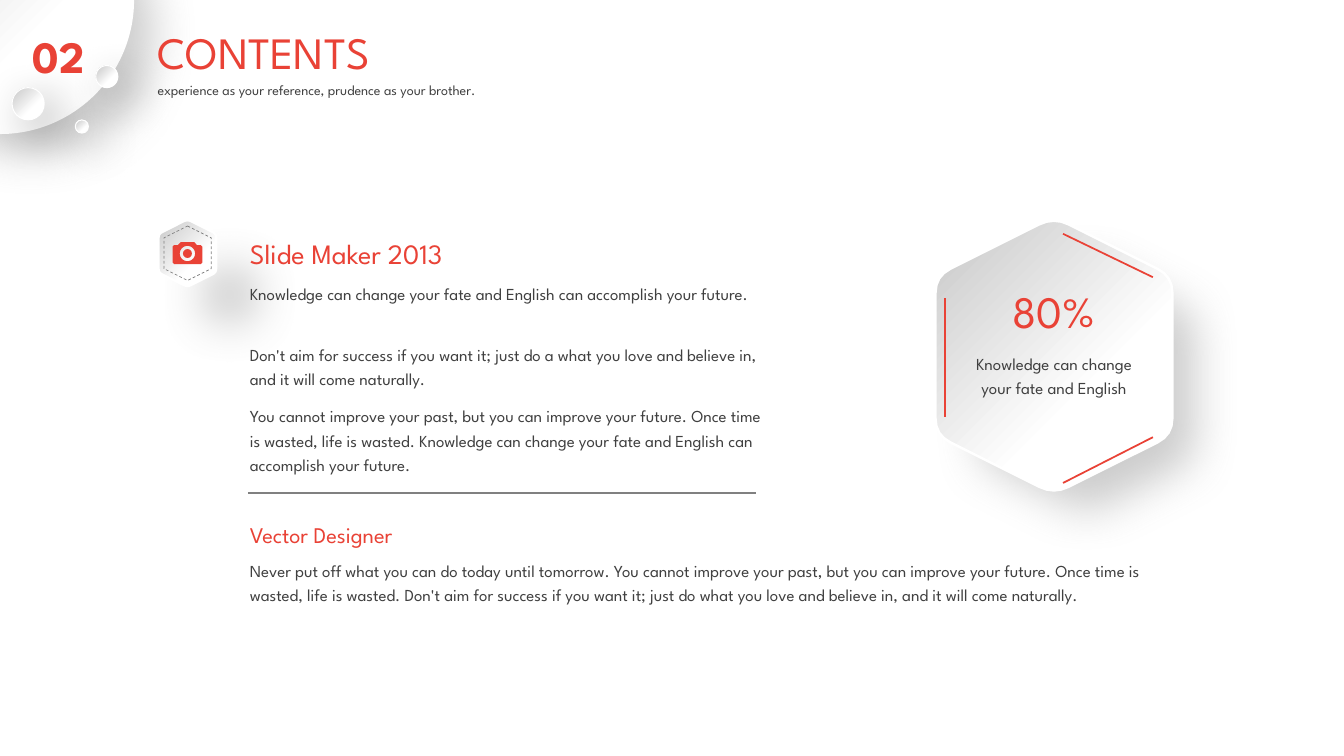
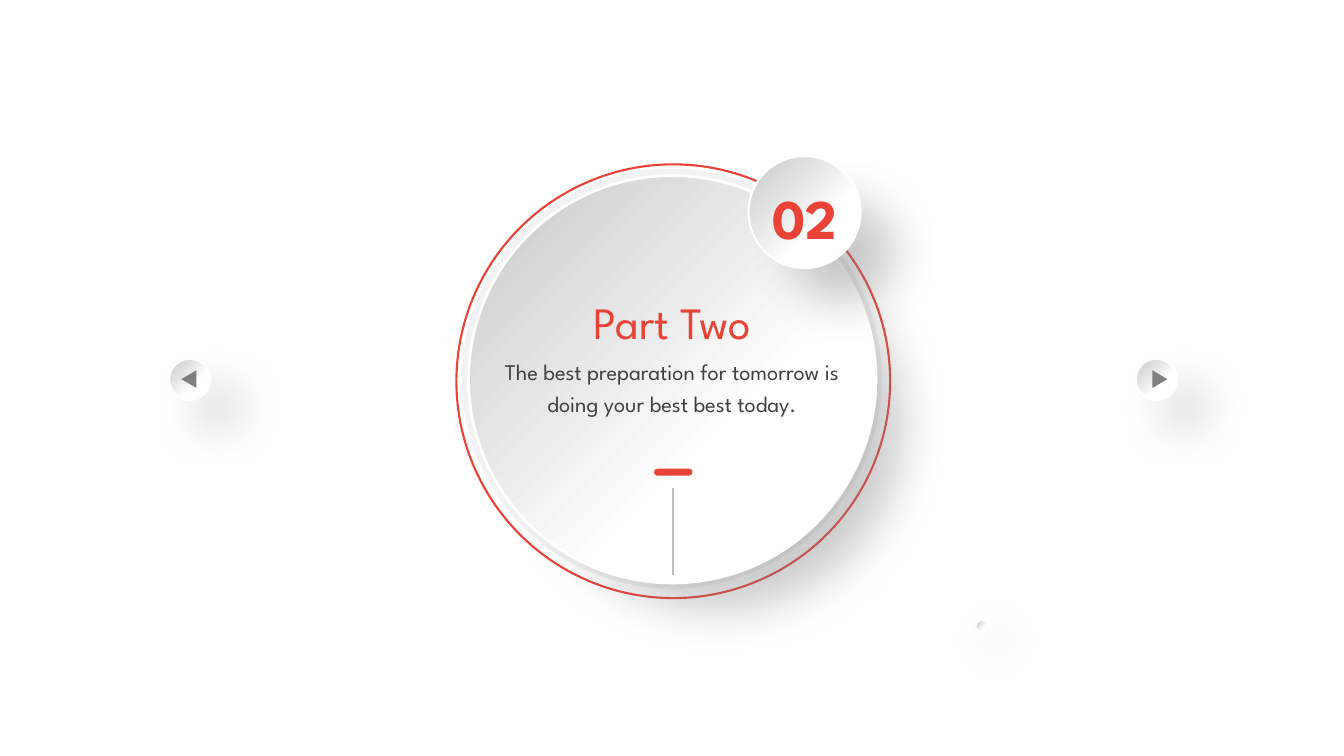
"""Build a contents slide and a section slide with soft embossed shapes."""
import math

from lxml import etree
from pptx import Presentation
from pptx.dml.color import RGBColor
from pptx.enum import dml, shapes, text
from pptx.oxml import ns
from pptx.util import Pt

FONT = "League Spartan"
RED, INK, GREY, WHITE = "E94236", "404040", "808080", "FFFFFF"
SHEEN = ((0, WHITE), (36, WHITE), (100, "C7C7C7"))
OVAL = shapes.MSO_SHAPE.OVAL
LEFT, CENTER = text.PP_ALIGN.LEFT, text.PP_ALIGN.CENTER


def rgb(value):
    """Turn a hex string into a colour."""
    return RGBColor.from_string(value)


def add_child(parent, tag, **attributes):
    """Append a DrawingML element."""
    values = {key: str(value) for key, value in attributes.items()}
    return etree.SubElement(parent, ns.qn(f"a:{tag}"), values)


def style(shape, fill=None, line=None, width=1, dash=None):
    """Give a shape a flat fill and outline, or none."""
    shape.shadow.inherit = False
    if fill:
        shape.fill.solid()
        shape.fill.fore_color.rgb = rgb(fill)
    else:
        shape.fill.background()
    if line:
        shape.line.color.rgb = rgb(line)
        shape.line.width = Pt(width)
        shape.line.dash_style = dash
    else:
        shape.line.fill.background()
    return shape


def emboss(shape, width=1.5, distance=45, shade=GREY, opacity=40):
    """Give a shape the shared sheen, white rim and soft shadow."""
    style(shape, WHITE, WHITE, width)
    shape.fill.gradient()
    shape.fill.gradient_angle = 135
    stops = shape._element.spPr.find(".//" + ns.qn("a:gsLst"))
    for stop in list(stops):
        stops.remove(stop)
    for position, colour in SHEEN:
        stop = add_child(stops, "gs", pos=position * 1000)
        add_child(stop, "srgbClr", val=colour)
    effects = shape._element.spPr.find(ns.qn("a:effectLst"))
    shadow = add_child(effects, "outerShdw", blurRad=Pt(33), dist=Pt(distance),
                       dir=45 * 60000, sx=90000, sy=90000, algn="tl",
                       rotWithShape=0)
    tint = add_child(shadow, "srgbClr", val=shade)
    add_child(tint, "alpha", val=opacity * 1000)


def add_preset(canvas, preset, left, top, width, height, rotation=0):
    """Add a preset shape."""
    shape = canvas.add_shape(preset, Pt(left), Pt(top), Pt(width), Pt(height))
    shape.rotation = rotation
    return shape


def add_circle(canvas, left, top, size):
    """Add a circle by its top left corner."""
    return add_preset(canvas, OVAL, left, top, size, size)


def add_bubble(canvas, left, top, size):
    """Add a small embossed circle."""
    emboss(add_circle(canvas, left, top, size), 0.75, 15, "000000", 45)


def add_label(canvas, box, wording, size, colour=INK, align=LEFT,
              bold=None, spacing=None, wrap=True):
    """Add a one paragraph text box."""
    frame = canvas.add_textbox(*map(Pt, box)).text_frame
    frame.word_wrap = wrap
    frame.auto_size = text.MSO_AUTO_SIZE.SHAPE_TO_FIT_TEXT
    paragraph = frame.paragraphs[0]
    paragraph.text = wording
    paragraph.alignment = align
    paragraph.line_spacing = spacing
    paragraph.font.name = FONT
    paragraph.font.size = Pt(size)
    paragraph.font.bold = bold
    paragraph.font.color.rgb = rgb(colour)


def add_body(canvas, box, wording, size=12, align=LEFT):
    """Add dark running text."""
    add_label(canvas, box, wording, size, align=align, spacing=1.2)


def add_number(canvas, box, wording, size):
    """Add a bold section number."""
    add_label(canvas, box, wording, size, RED, CENTER, bold=True, wrap=False)


def add_line(canvas, start, end, colour, width):
    """Add a straight line without a shadow."""
    line = canvas.add_connector(shapes.MSO_CONNECTOR.STRAIGHT,
                                *map(Pt, (*start, *end)))
    line.line.color.rgb = rgb(colour)
    line.line.width = Pt(width)
    add_child(line._element.spPr, "effectLst")


def round_corners(corners, cut, steps):
    """Return the points of a polygon with rounded corners."""
    points = []
    for i, (x, y) in enumerate(corners):
        ends = []
        for px, py in (corners[i - 1], corners[(i + 1) % len(corners)]):
            share = cut / math.dist((x, y), (px, py))
            ends.append((x + share * (px - x), y + share * (py - y)))
        (ax, ay), (bx, by) = ends
        for step in range(steps + 1):
            t = step / steps
            a, c, b = (1 - t) ** 2, 2 * t * (1 - t), t ** 2
            points.append((a * ax + c * x + b * bx, a * ay + c * y + b * by))
    return points


def add_outline(canvas, *contours):
    """Add a freeform made of closed contours."""
    builder = None
    for contour in contours:
        first, *rest = [(Pt(x), Pt(y)) for x, y in contour]
        if builder is None:
            builder = canvas.build_freeform(*first, scale=1.0)
        else:
            builder.move_to(*first)
        builder.add_line_segments(rest, close=True)
    return builder.convert_to_shape()


def add_hexagon(canvas, x, y, half_width, rim):
    """Add an embossed upright hexagon with rounded corners."""
    peak, shoulder = 1.17 * half_width, 0.67 * half_width
    corners = [(x, y - peak), (x + half_width, y - shoulder),
               (x + half_width, y + shoulder), (x, y + peak),
               (x - half_width, y + shoulder), (x - half_width, y - shoulder)]
    outline = round_corners(corners, 0.14 * half_width, 4)
    emboss(add_outline(canvas, outline), rim)


def add_camera(canvas, x, y):
    """Add a camera icon around the middle of its lens."""
    icon = canvas.add_group_shape().shapes
    body = [(-10.6, -6), (-5.8, -6), (-5.8, -8.2), (5.8, -8.2),
            (5.8, -6), (10.6, -6), (10.6, 7.5), (-10.6, 7.5)]
    body = round_corners([(x + dx, y + dy) for dx, dy in body], 1.05, 1)
    angles = [math.radians(degree) for degree in range(360, 0, -20)]
    ring = [(x + 5.5 * math.cos(a), y + 5.5 * math.sin(a)) for a in angles]
    style(add_circle(icon, x - 3.2, y - 3.2, 6.4), RED)
    style(add_outline(icon, body, ring), RED)


def add_arrow_button(canvas, left, arrow_left, rotation):
    """Add a round button with a triangle."""
    button = canvas.add_group_shape().shapes
    emboss(add_circle(button, left, 256.2, 29.5), distance=30)
    style(add_preset(button, shapes.MSO_SHAPE.ISOSCELES_TRIANGLE, arrow_left,
                     265.4, 12.6, 10.8, rotation), GREY)


def build_contents(canvas):
    """Fill the contents slide."""
    add_hexagon(canvas, 133.9, 180.9, 20.6, 1.5)
    emboss(add_circle(canvas, -95, -95, 190))
    for bubble in ((8.6, 62.6, 23), (53.8, 85.7, 9.4), (68.4, 46.8, 15.8)):
        add_bubble(canvas, *bubble)
    add_number(canvas, (16, 16.6, 51.8, 46), "02", 32)
    add_label(canvas, (105.6, 14.4, 209.5, 46), "CONTENTS", 32, RED)
    add_body(canvas, (105.6, 52.6, 312.5, 21),
             "experience as your reference, prudence as your brother.", 10)

    column = 171.4
    add_label(canvas, (column, 165.2, 241, 31.5), "Slide Maker 2013", 20, RED)
    for top, height, wording in (
        (196.3, 42.5, "Knowledge can change your fate and English can "
                      "accomplish your future."),
        (239.8, 42.5, "Don't aim for success if you want it; just do a what "
                      "you love and believe in, and it will come naturally."),
        (283.7, 58.3, "You cannot improve your past, but you can improve your "
                      "future. Once time is wasted, life is wasted. Knowledge "
                      "can change your fate and English can accomplish your "
                      "future."),
    ):
        add_body(canvas, (column, top, 388, height), wording)

    style(add_preset(canvas, shapes.MSO_SHAPE.HEXAGON, 114.5, 164, 38.9, 33.8, 90),
          line=GREY, width=0.5, dash=dml.MSO_LINE.DASH)
    add_camera(canvas, 133.9, 181.1)

    add_hexagon(canvas, 752.8, 254, 84.6, 1.75)
    for start, end in (((759.3, 167), (823.5, 198)),
                       ((675, 213), (675, 298)),
                       ((823.5, 312.3), (759.3, 345))):
        add_line(canvas, start, end, RED, 1.25)
    add_label(canvas, (693, 199.4, 119.5, 46), "80%", 32, RED, CENTER)
    add_body(canvas, (681.6, 246.5, 142.6, 59.8),
             "Knowledge can change your fate and English", align=CENTER)

    add_body(canvas, (column, 393.8, 676.8, 59.8),
             "Never put off what you can do today until tomorrow. You cannot "
             "improve your past, but you can improve your future. Once time is "
             "wasted, life is wasted. Don't aim for success if you want it; just "
             "do what you love and believe in, and it will come naturally.")
    add_label(canvas, (column, 368.6, 173.5, 26.6), "Vector Designer", 16, RED)
    add_line(canvas, (177, 352.2), (540, 352.2), GREY, 1)


def build_section(canvas):
    """Fill the section slide."""
    style(add_circle(canvas, 326, 117.4, 309.8), line=RED, width=1.5)
    style(add_circle(canvas, 329.8, 120.4, 300), "F2F2F2")
    add_bubble(canvas, 697, 443.3, 8.6)
    emboss(add_circle(canvas, 334.7, 125.4, 291), 2, 66)
    emboss(add_circle(canvas, 534.7, 111.5, 80))
    add_label(canvas, (401.8, 207, 157, 46), "Part Two", 32, RED, CENTER)
    add_body(canvas, (353.3, 248.4, 253.4, 77),
             "The best preparation for tomorrow is doing your best best today.",
             16, CENTER)
    add_number(canvas, (544.3, 127.4, 61.2, 55.4), "02", 40)
    dash = add_preset(canvas, shapes.MSO_SHAPE.ROUNDED_RECTANGLE,
                      467.2, 334.8, 27.4, 5)
    dash.adjustments[0] = 0.5
    style(dash, RED)
    add_line(canvas, (480.7, 348.5), (480.7, 410.4), "BFBFBF", 2)
    add_arrow_button(canvas, 120.8, 128.6, 270)
    add_arrow_button(canvas, 811.2, 822.2, 90)


def main():
    """Build and save the slides."""
    deck = Presentation()
    deck.slide_width, deck.slide_height = Pt(960), Pt(540)
    for build in (build_contents, build_section):
        build(deck.slides.add_slide(deck.slide_layouts[6]).shapes)
    deck.save("out.pptx")


if __name__ == "__main__":
    main()
